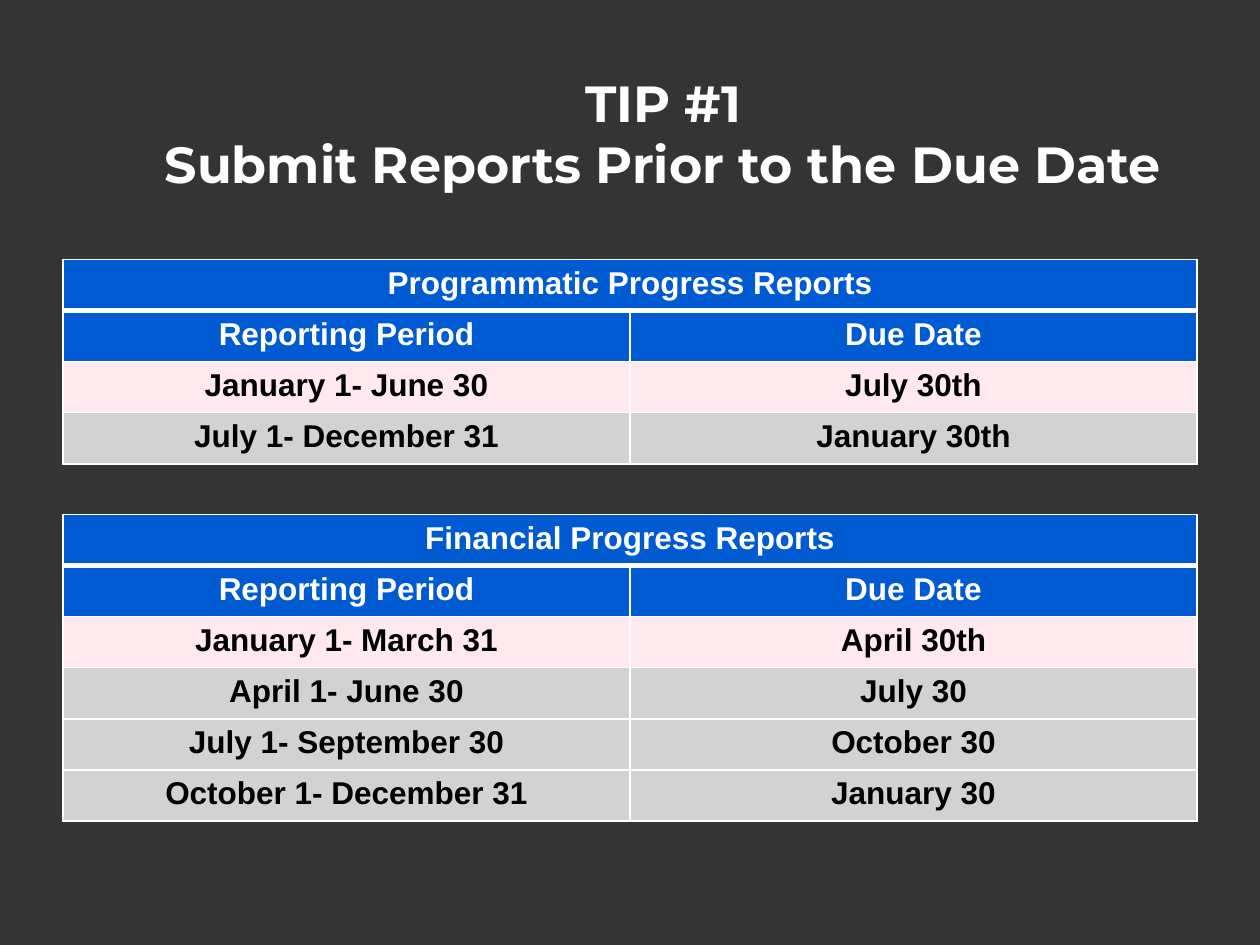
from lxml.etree import SubElement
from pptx import Presentation
from pptx.dml.color import RGBColor
from pptx.enum.text import MSO_ANCHOR as Anchor, PP_ALIGN as Align
from pptx.oxml.ns import qn
from pptx.util import Cm, Pt

DARK = RGBColor(0x34, 0x34, 0x34)
WHITE = RGBColor(0xFF, 0xFF, 0xFF)
BLACK = RGBColor(0x00, 0x00, 0x00)
BLUE = RGBColor(0x00, 0x5B, 0xD3)
PINK = RGBColor(0xFF, 0xE8, 0xEE)
GREY = RGBColor(0xD2, 0xD2, 0xD2)

LEFT, WIDTH, ROW = 1.27, 22.86, 1.03
HEADS = ("Reporting Period", "Due Date")
PROGRAM = [
    ("January 1- June 30", "July 30th"),
    ("July 1- December 31", "January 30th"),
]
FINANCE = [
    ("January 1- March 31", "April 30th"),
    ("April 1- June 30", "July 30"),
    ("July 1- September 30", "October 30"),
    ("October 1- December 31", "January 30"),
]


def style(para, font, size, color):
    para.alignment = Align.CENTER
    for run in para.runs:
        run.font.name = font
        run.font.size = Pt(size)
        run.font.bold = True
        run.font.color.rgb = color


def border(cell, row):
    props = cell._tc.get_or_add_tcPr()
    thick = {(0, "B"), (1, "T")}
    for side in "LRTB":
        width = Pt(3 if (row, side) in thick else 1)
        line = SubElement(props, qn(f"a:ln{side}"), w=str(width))
        fill = SubElement(line, qn("a:solidFill"))
        SubElement(fill, qn("a:srgbClr"), val=str(WHITE))


def add_title(slide, left, top, width, height, text):
    box = slide.shapes.add_textbox(Cm(left), Cm(top), Cm(width), Cm(height))
    frame = box.text_frame
    frame.word_wrap = True
    frame.vertical_anchor = Anchor.MIDDLE
    para = frame.paragraphs[0]
    para.text = text
    para._p.get_or_add_pPr().set("marL", str(Cm(1.35)))
    style(para, "Montserrat", 29, WHITE)


def add_dates(slide, left, top, width, title, dates):
    rows = [(title, ""), HEADS, *dates]
    frame = slide.shapes.add_table(
        len(rows), 2, Cm(left), Cm(top), Cm(width), Cm(ROW * len(rows)))
    table = frame.table
    table.cell(0, 0).merge(table.cell(0, 1))
    fills = [BLUE, BLUE, PINK] + [GREY] * (len(rows) - 3)
    for i, (row, fill) in enumerate(zip(rows, fills)):
        table.rows[i].height = Cm(ROW)
        for cell, text in zip(table.rows[i].cells, row):
            border(cell, i)
            cell.fill.solid()
            cell.fill.fore_color.rgb = fill
            cell.text_frame.text = text
            style(cell.text_frame.paragraphs[0], "Arial", 18,
                  WHITE if fill == BLUE else BLACK)


def main():
    deck = Presentation()
    deck.slide_width, deck.slide_height = Cm(25.4), Cm(19.05)
    slide = deck.slides.add_slide(deck.slide_layouts[6])
    slide.background.fill.solid()
    slide.background.fill.fore_color.rgb = DARK
    add_title(slide, LEFT, 0.74, WIDTH, 3.89,
              "TIP #1\vSubmit Reports Prior to the Due Date")
    add_dates(slide, LEFT, 5.23, WIDTH, "Programmatic Progress Reports", PROGRAM)
    add_dates(slide, LEFT, 10.37, WIDTH, "Financial Progress Reports", FINANCE)
    deck.save("out.pptx")


if __name__ == "__main__":
    main()
